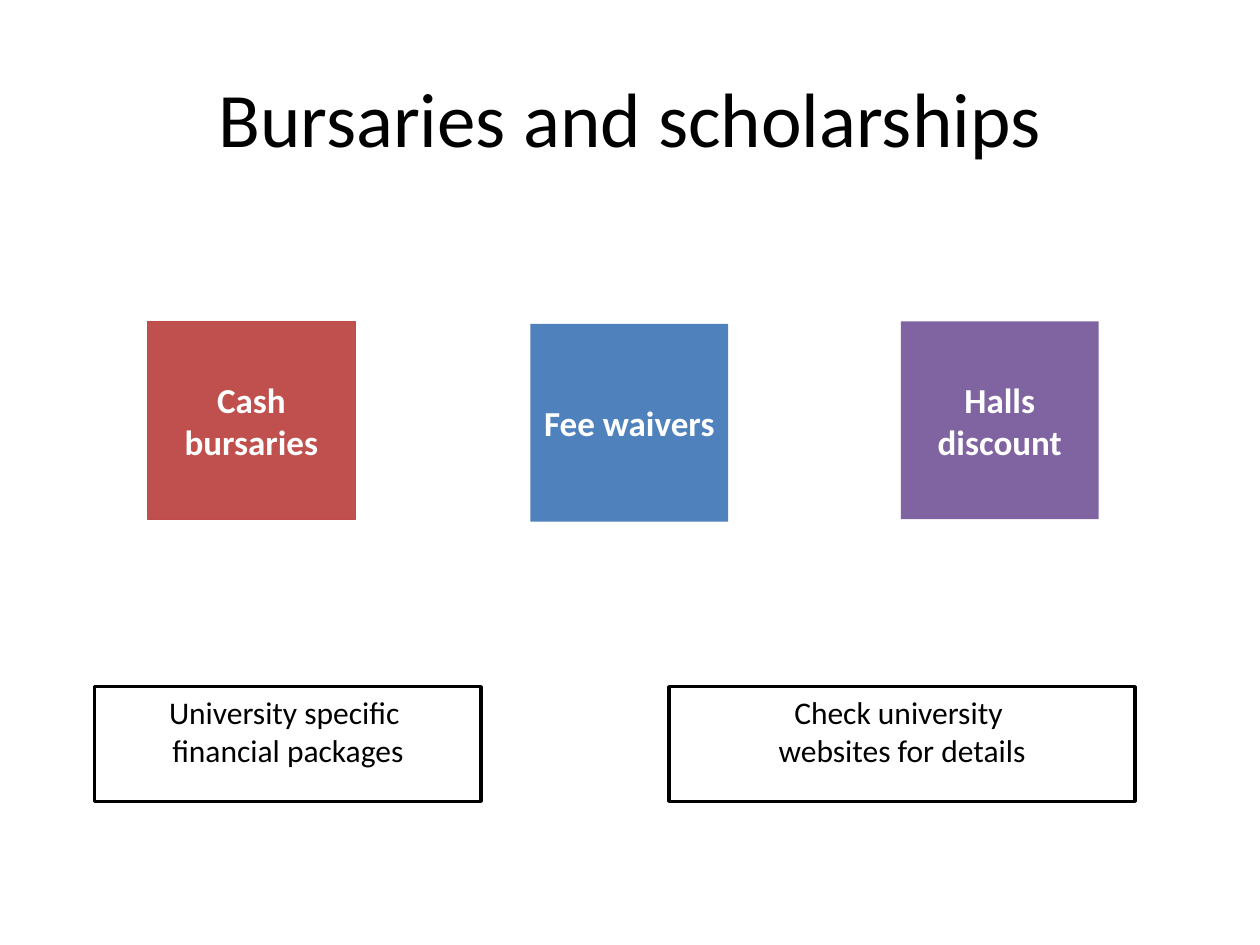
from dataclasses import dataclass

from pptx import Presentation
from pptx.dml.color import RGBColor
from pptx.enum.shapes import MSO_SHAPE as Preset
from pptx.enum.text import MSO_ANCHOR as Anchor, PP_ALIGN as Align
from pptx.util import Inches, Pt


@dataclass(frozen=True)
class Theme:
    """Colours, typeface and type sizes of the slide."""
    face: str = "Calibri"
    ink: str = "000000"
    paper: str = "FFFFFF"
    cash: str = "C0504D"
    cash_edge: str = "BF4C48"
    waiver: str = "4F81BD"
    halls: str = "8064A2"
    title_size: int = 44
    award_size: int = 20
    advice_size: int = 18


class SlideBuilder:
    """Draws themed elements on the current slide."""

    def __init__(self, slide, theme):
        """Keep the slide and its theme."""
        self.slide = slide
        self.theme = theme

    def place(self, element, left, top, width, height):
        """Set position and size in inches."""
        box = {"left": left, "top": top, "width": width, "height": height}
        for name, value in box.items():
            setattr(element, name, Inches(value))

    def set_lines(self, frame, lines, size, color, anchor, bold=False):
        """Fill a text frame with centred paragraphs."""
        layout = {"text": "\n".join(lines), "word_wrap": True,
                  "vertical_anchor": anchor}
        for name, value in layout.items():
            setattr(frame, name, value)
        style = {"name": self.theme.face, "size": Pt(size), "bold": bold}
        for paragraph in frame.paragraphs:
            paragraph.alignment = Align.CENTER
            for run in paragraph.runs:
                for name, value in style.items():
                    setattr(run.font, name, value)
                run.font.color.rgb = RGBColor.from_string(color)

    def title(self, wording, box):
        """Fill the title placeholder."""
        heading = self.slide.shapes.title
        self.place(heading, *box)
        self.set_lines(heading.text_frame, [wording], self.theme.title_size,
                       self.theme.ink, Anchor.MIDDLE)

    def panel(self, box, fill=None, edge=None, weight=0.75):
        """Add a rectangle with an optional fill and outline."""
        panel = self.slide.shapes.add_shape(
            Preset.RECTANGLE, *(Inches(length) for length in box))
        panel.shadow.inherit = False
        for part, color in ((panel.fill, fill), (panel.line.fill, edge)):
            if color:
                part.solid()
                part.fore_color.rgb = RGBColor.from_string(color)
            else:
                part.background()
        if edge:
            panel.line.width = Pt(weight)
        return panel

    def award(self, lines, box, fill, edge=None):
        """Add a coloured tile naming a kind of award."""
        frame = self.panel(box, fill, edge).text_frame
        frame.margin_left = frame.margin_right = Inches(0.05)
        self.set_lines(frame, lines, self.theme.award_size, self.theme.paper,
                       Anchor.MIDDLE, bold=True)

    def advice(self, lines, left, width):
        """Add an outlined box of advice on the bottom row."""
        box = (left, 5.45, width, 0.91)
        frame = self.panel(box, edge=self.theme.ink, weight=2).text_frame
        self.set_lines(frame, lines, self.theme.advice_size, self.theme.ink,
                       Anchor.TOP)


def main():
    """Build and save the slide."""
    deck = Presentation()
    deck.slide_width, deck.slide_height = Inches(10), Inches(7.5)
    theme = Theme()
    builder = SlideBuilder(
        deck.slides.add_slide(deck.slide_layouts.get_by_name("Title Only")), theme)
    builder.title("Bursaries and scholarships", (0.5, 0.3, 9, 1.25))

    side = 1.57
    builder.award(["Halls", "discount"], (7.15, 2.55, side, side), theme.halls)
    builder.award(["Fee waivers"], (4.21, 2.57, side, side), theme.waiver)
    builder.award(["Cash bursaries"], (1.17, 2.55, 1.65, side), theme.cash,
                  theme.cash_edge)

    builder.advice(["University specific ", "financial packages"], 0.75, 3.07)
    builder.advice(["Check university ", "websites for details"], 5.31, 3.7)
    deck.save("out.pptx")


if __name__ == "__main__":
    main()
